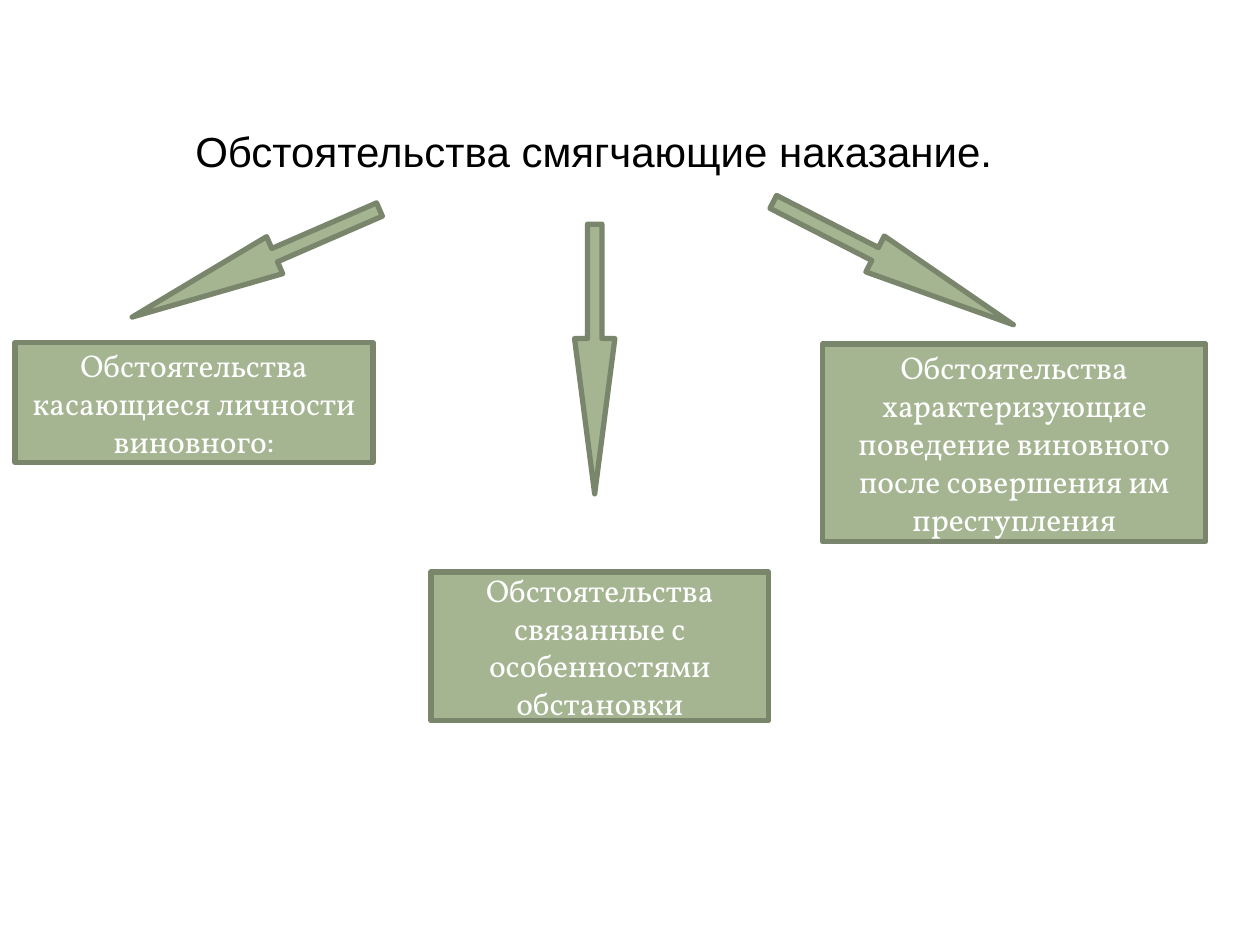
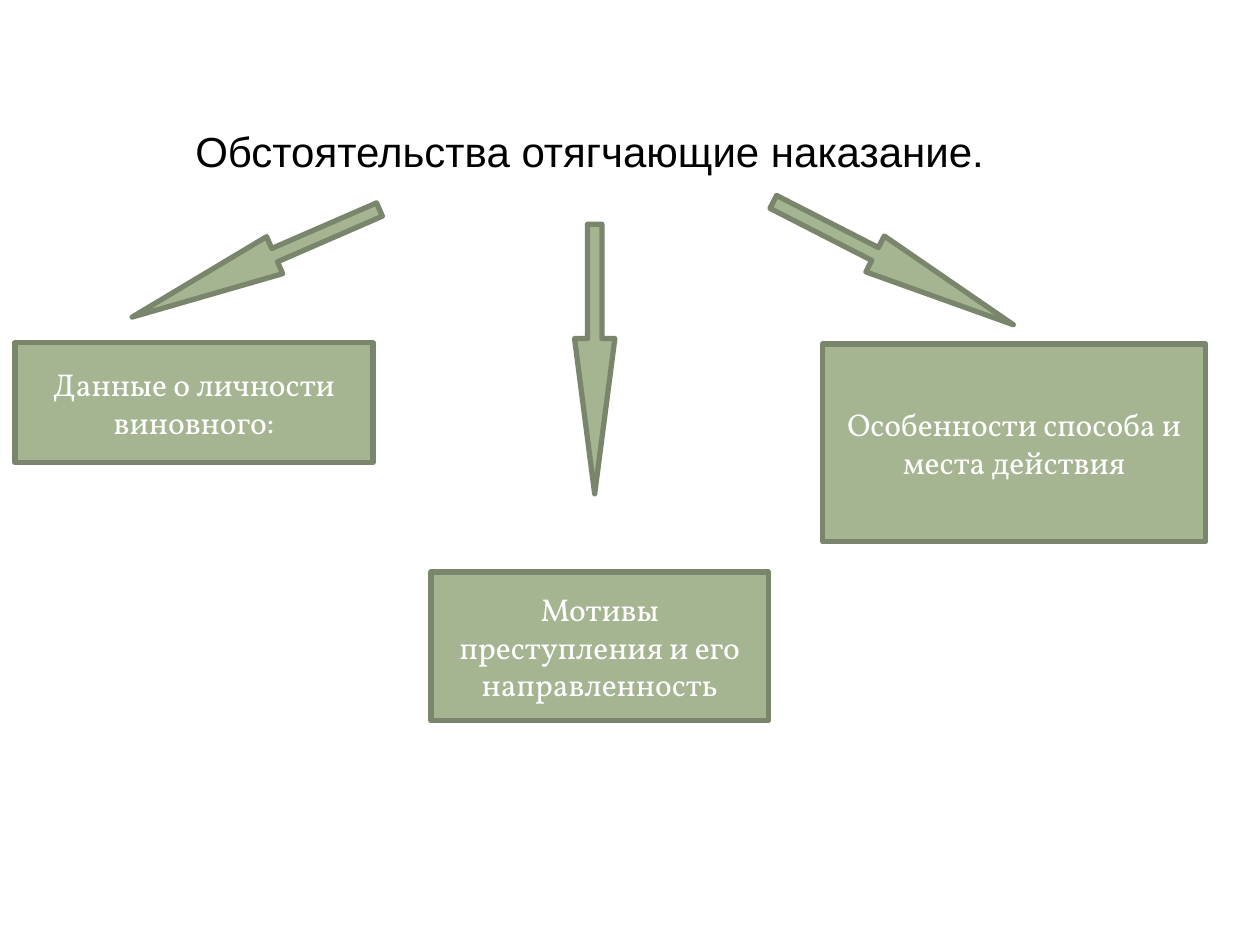
from pptx import Presentation
from pptx.dml.color import RGBColor
from pptx.enum.shapes import MSO_SHAPE as Form
from pptx.enum.text import MSO_ANCHOR as Anchor, PP_ALIGN as Align
from pptx.util import Inches, Pt

ARROWS = [(1.87, 1.02, 66.5), (6.93, 1.02, 297.1), (4.56, 1.78, 0)]
BOXES = [(0.12, 2.72, 2.84, 0.95), (3.42, 4.54, 2.68, 1.18), (6.53, 2.73, 3.04, 1.57)]
TOPICS = [
    ("Обстоятельства смягчающие наказание.", [
        "Обстоятельства касающиеся личности виновного:",
        "Обстоятельства связанные с особенностями обстановки",
        "Обстоятельства характеризующие поведение виновного "
        "после совершения им преступления",
    ]),
    ("Обстоятельства отягчающие наказание.", [
        "Данные о личности виновного:",
        "Мотивы преступления и его направленность",
        "Особенности способа и места действия",
    ]),
]


def color(code):
    return RGBColor.from_string(code)


class Deck:
    fill, edge, ink, light = "A5B592", "7A866C", "000000", "FFFFFF"
    head, body = "Arial", "Vollkorn"

    def __init__(self):
        self.deck = Presentation()
        self.deck.slide_width, self.deck.slide_height = Inches(10), Inches(7.5)
        self.slide = None

    def page(self):
        self.slide = self.deck.slides.add_slide(self.deck.slide_layouts[6])

    def label(self, frame, text, font, size, tint):
        frame.word_wrap = True
        run = frame.paragraphs[0].add_run()
        run.text = text
        run.font.name, run.font.size = font, Pt(size)
        run.font.color.rgb = color(tint)

    def title(self, text):
        box = self.slide.shapes.add_textbox(*map(Inches, (0.83, 0.95, 7.8, 0.51)))
        box.text_frame.margin_left = Inches(0.72)
        self.label(box.text_frame, text, self.head, 24, self.ink)

    def shape(self, form, area):
        item = self.slide.shapes.add_shape(form, *map(Inches, area))
        item.shadow.inherit = False
        item.fill.solid()
        item.fill.fore_color.rgb = color(self.fill)
        item.line.color.rgb = color(self.edge)
        item.line.width = Pt(3)
        return item

    def arrow(self, left, top, angle):
        item = self.shape(Form.DOWN_ARROW, (left, top, 0.32, 2.14))
        item.adjustments[0], item.adjustments[1] = 0.36, 3.85
        item.rotation = angle

    def box(self, area, text):
        frame = self.shape(Form.RECTANGLE, area).text_frame
        frame.vertical_anchor = Anchor.MIDDLE
        frame.paragraphs[0].alignment = Align.CENTER
        self.label(frame, text, self.body, 18, self.light)

    def save(self):
        self.deck.save("out.pptx")


def main():
    deck = Deck()
    for title, labels in TOPICS:
        deck.page()
        deck.title(title)
        for place in ARROWS:
            deck.arrow(*place)
        for area, text in zip(BOXES, labels):
            deck.box(area, text)
    deck.save()


if __name__ == "__main__":
    main()
